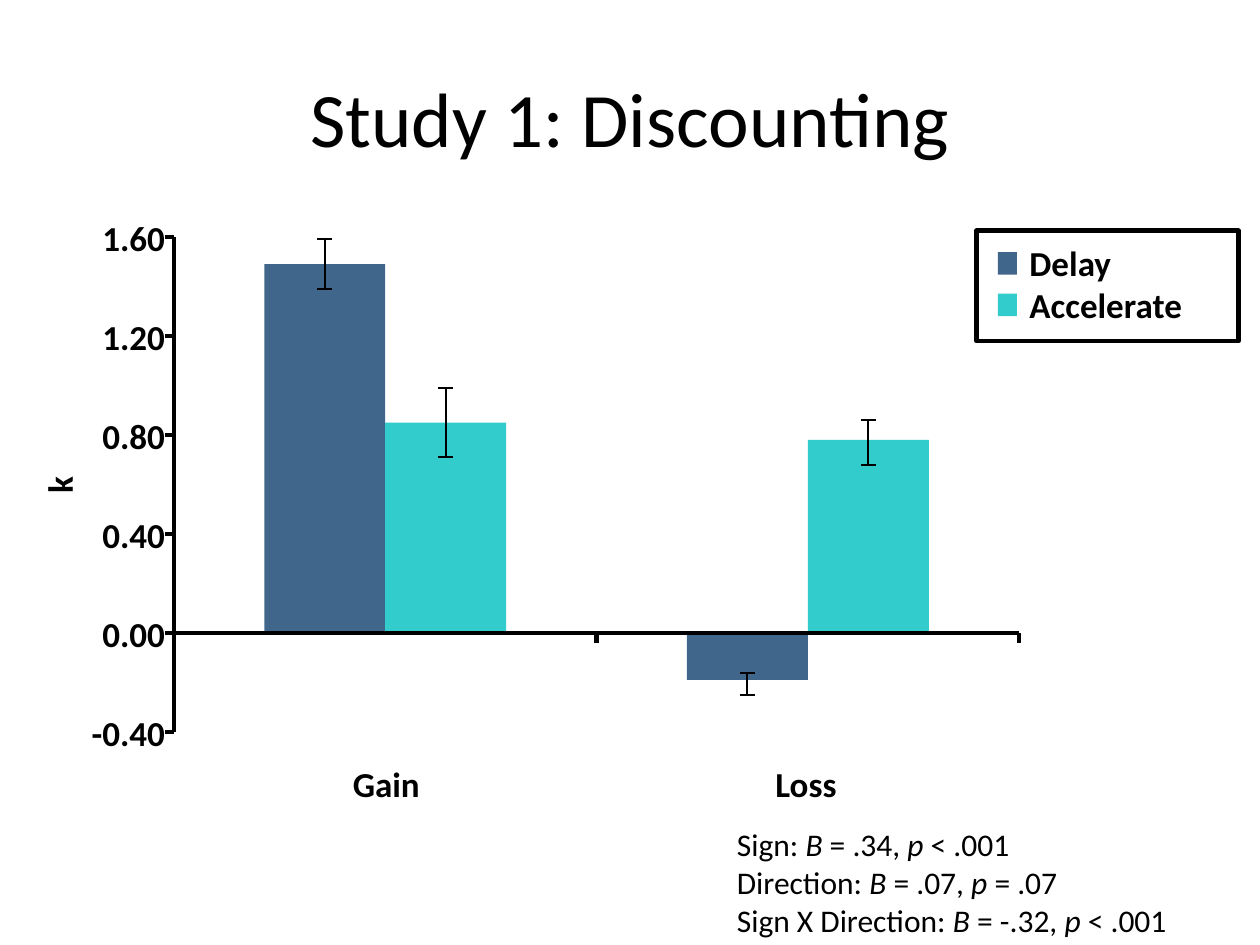
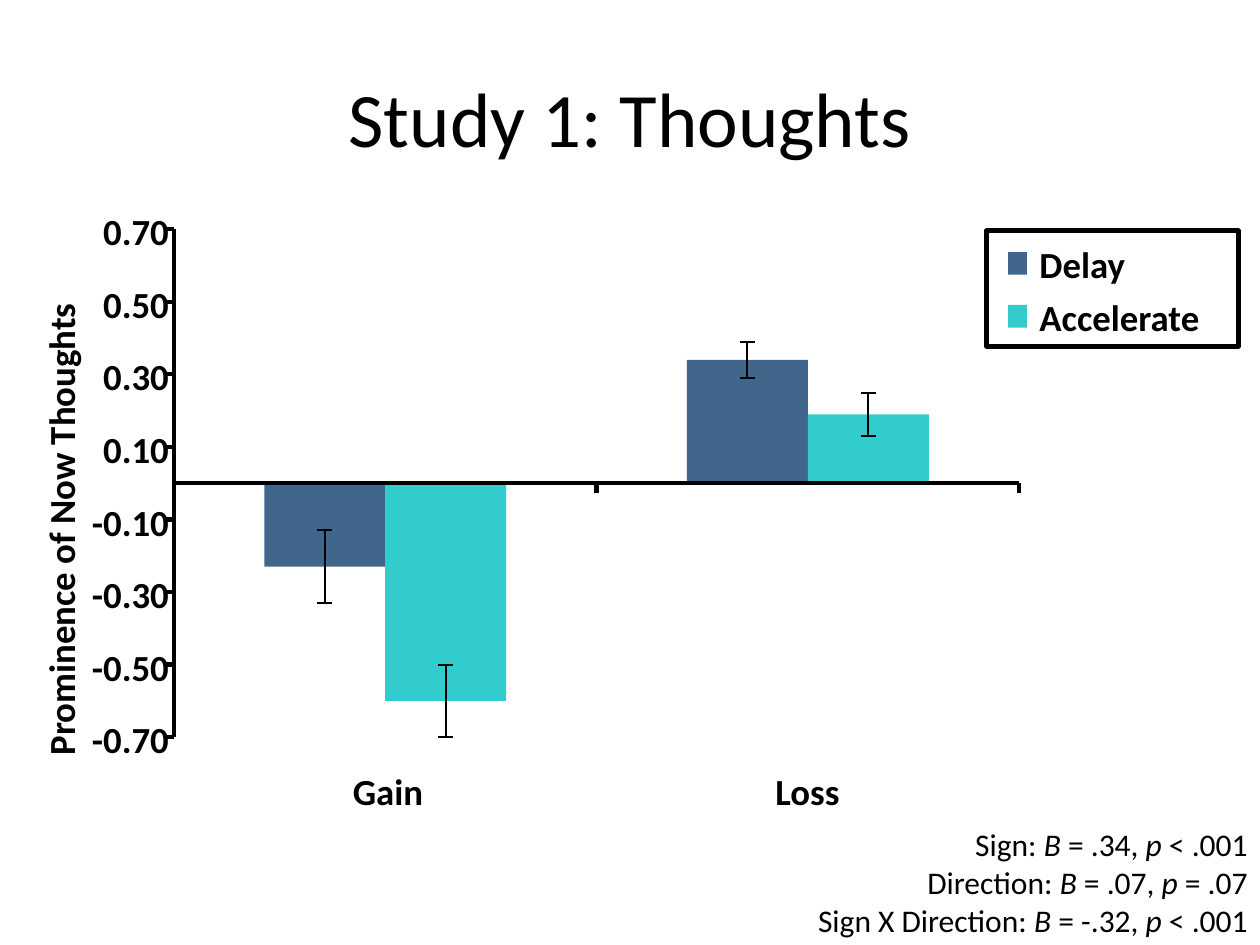
from lxml import etree
from pptx import Presentation
from pptx.dml.color import RGBColor
from pptx.enum import shapes, text
from pptx.oxml.ns import qn
from pptx.util import Inches, Pt

HUES = {"ink": "000000", "paper": "FFFFFF", "delay": "003366", "accel": "33CCCC"}
SEEN = {"delay": 75}  # opacity in percent
FONT = "Calibri"
THIN, THICK = 1.12, 2.37
KEYS = {"delay": "Delay", "accel": "Accelerate"}
GROUPS = ["Gain", "Loss"]
NOTES = [("Sign: ", " = .34, ", " < .001"),
         ("Direction: ", " = .07, ", " = .07"),
         ("Sign X Direction: ", " = -.32, ", " < .001")]
LEFT, RIGHT, MID = (text.PP_ALIGN.LEFT, text.PP_ALIGN.RIGHT, text.PP_ALIGN.CENTER)

# Each bar holds its value and the low and high ends of its error bar.
STUDIES = [
    {"title": "Study 1: Discounting", "unit": "k", "size": 20,
     "plot": (1.38, 1.88, 6.71, 3.93), "range": (-0.4, 1.6, 0.4),
     "gap": 0, "names": 6.05, "side": (0.39, 3.68, 0.15, 0.33),
     "bars": {"delay": [(1.49, 1.39, 1.59), (-0.19, -0.25, -0.16)],
              "accel": [(0.85, 0.71, 0.99), (0.78, 0.68, 0.86)]},
     "legend": (7.75, 1.83, 2.08, 0.88), "step": 0.33, "align": LEFT},
    {"title": "Study 1: Thoughts", "unit": "Prominence of Now Thoughts", "size": 21,
     "plot": (1.38, 1.82, 6.71, 4.03), "range": (-0.7, 0.7, 0.2),
     "gap": 0.03, "names": 6.1, "side": (-1.59, 3.75, 4.14, 0.35),
     "bars": {"delay": [(-0.23, -0.33, -0.13), (0.34, 0.29, 0.39)],
              "accel": [(-0.6, -0.7, -0.5), (0.19, 0.13, 0.25)]},
     "legend": (7.83, 1.83, 2, 0.92), "step": 0.42, "align": RIGHT},
]


def tint(hue):
    return RGBColor.from_string(HUES[hue])


def rect(slide, box, hue, edge=False):
    shape = slide.shapes.add_shape(shapes.MSO_SHAPE.RECTANGLE, *map(Inches, box))
    shape.shadow.inherit = False
    shape.fill.solid()
    shape.fill.fore_color.rgb = tint(hue)
    if hue in SEEN:
        tone = shape.fill._xPr.find(".//" + qn("a:srgbClr"))
        etree.SubElement(tone, qn("a:alpha"), val=str(SEEN[hue] * 1000))
    if edge:
        shape.line.color.rgb = tint("ink")
        shape.line.width = Pt(THICK)
    else:
        shape.line.fill.background()
    return shape


def line(slide, x1, y1, x2, y2, width=THICK):
    link = slide.shapes.add_connector(
        shapes.MSO_CONNECTOR.STRAIGHT, *map(Inches, (x1, y1, x2, y2)))
    link.line.color.rgb = tint("ink")
    link.line.width = Pt(width)
    etree.SubElement(link._element.spPr, qn("a:effectLst"))
    return link


def frame(slide, box, pad=(0, 0), anchor=text.MSO_ANCHOR.TOP):
    shape = slide.shapes.add_textbox(*map(Inches, box))
    body = shape.text_frame
    wide, high = map(Inches, pad)
    form = {"word_wrap": True, "vertical_anchor": anchor,
            "margin_left": wide, "margin_right": wide,
            "margin_top": high, "margin_bottom": high}
    for name, value in form.items():
        setattr(body, name, value)
    return shape, body.paragraphs[0]


def run(para, words, size, **style):
    part = para.add_run()
    part.text = words
    for name, value in {"name": FONT, "size": Pt(size), **style}.items():
        setattr(part.font, name, value)
    part.font.color.rgb = tint("ink")


def label(slide, box, words, size, align=LEFT, turn=0):
    shape, para = frame(slide, box)
    shape.rotation = turn
    para.alignment = align
    run(para, words, size, bold=True)


def title(slide, box, words):
    _, para = frame(slide, box, (0.1, 0.05), text.MSO_ANCHOR.MIDDLE)
    para.alignment = MID
    run(para, words, 44)


def bar(slide, x, wide, zero, ends, hue):
    """Draw one bar with its two error whiskers."""
    tip = ends[0]
    block = rect(slide, (x, min(tip, zero), wide, abs(tip - zero)), hue)
    mid = x + wide / 2
    for end in ends[1:]:
        stem = line(slide, mid, tip, mid, end, THIN)
        stem.begin_connect(block, 0 if tip < zero else 2)
        line(slide, mid - 0.06, end, mid + 0.06, end, THIN)


def plot(slide, box, study):
    left, top, wide, high = box
    low, peak, step = study["range"]
    size = study["size"]

    def level(value):
        return top + high * (peak - value) / (peak - low)

    zero = level(0)
    span = wide / len(GROUPS)
    thick = 0.96
    inset = (span - thick * len(KEYS)) / 2
    for col, (hue, rows) in enumerate(study["bars"].items()):
        for slot, values in enumerate(rows):
            x = left + slot * span + inset + col * thick
            bar(slide, x, thick, zero, [level(v) for v in values], hue)

    line(slide, left, top, left, top + high)
    edge = left - 0.07 + study["gap"]
    for mark in range(round((peak - low) / step) + 1):
        value = round(low + mark * step, 2)
        y = level(value)
        line(slide, left - 0.07, y, left, y)
        label(slide, (edge - 0.8, y - 0.16, 0.8, 0.33), f"{value:.2f}", size, RIGHT)

    line(slide, left, zero, left + wide, zero)
    for slot in range(len(GROUPS) + 1):
        x = left + slot * span
        line(slide, x, zero + 0.08, x, zero)
    for slot, name in enumerate(GROUPS):
        label(slide, (left + slot * span + 1.42, study["names"], 0.8, 0.33), name, size)
    label(slide, study["side"], study["unit"], size, turn=270)


def legend(slide, box, step, size):
    left, top, wide, _ = box
    rect(slide, box, "paper", edge=True)
    for row, (hue, name) in enumerate(KEYS.items()):
        y = top + row * step
        rect(slide, (left + 0.17, y + 0.17, 0.15, 0.18), hue)
        label(slide, (left + 0.42, y + 0.09, wide - 0.47, 0.33), name, size)


def notes(slide, box, align):
    _, para = frame(slide, box, (0.1, 0.05))
    para.alignment = align
    for row, (head, beta, prob) in enumerate(NOTES):
        if row:
            para.add_line_break()
        for words, slant in ((head, False), ("B", True), (beta, False),
                             ("p", True), (prob, False)):
            run(para, words, 18, italic=slant)


def main():
    deck = Presentation()
    deck.slide_width, deck.slide_height = Inches(10), Inches(7.5)
    for study in STUDIES:
        slide = deck.slides.add_slide(deck.slide_layouts[6])
        title(slide, (0.5, 0.3, 9, 1.25), study["title"])
        plot(slide, study["plot"], study)
        legend(slide, study["legend"], study["step"], study["size"])
        notes(slide, (5.75, 6.5, 4.25, 1), study["align"])
    deck.save("out.pptx")


if __name__ == "__main__":
    main()
